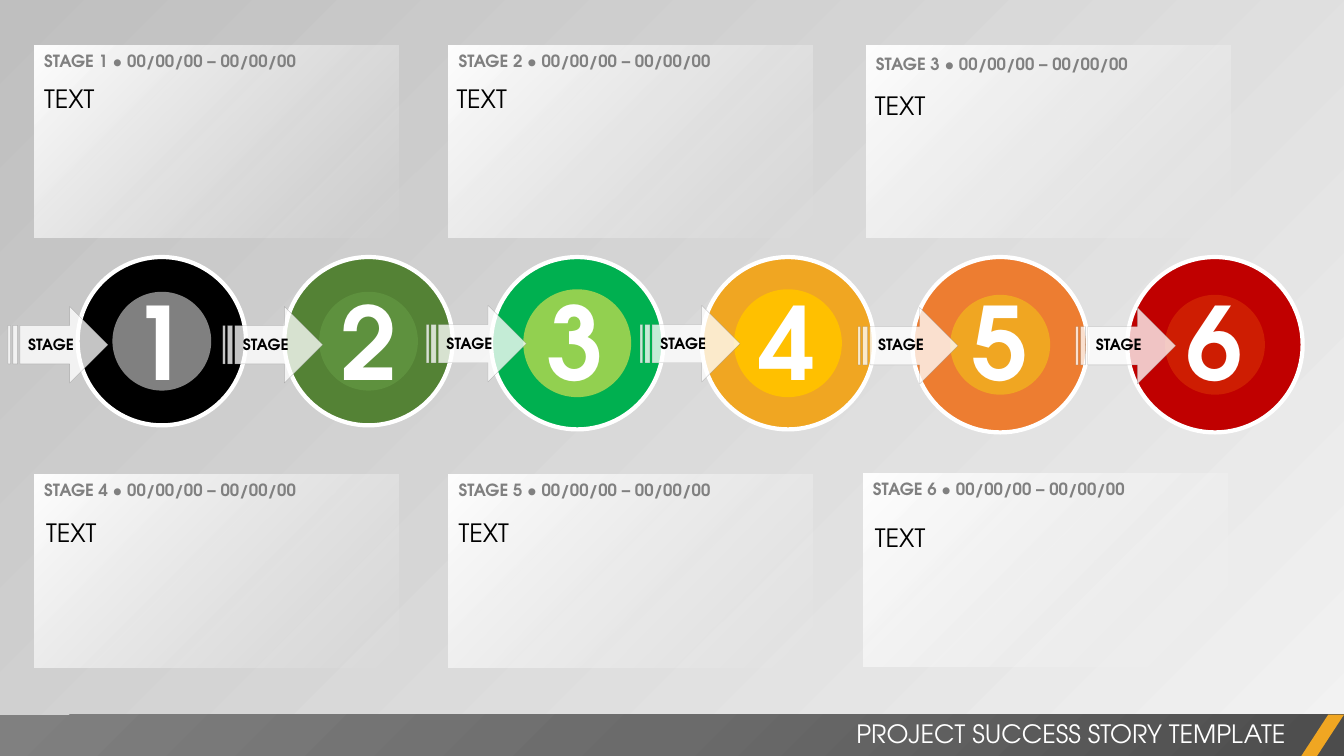
"""Build a six-stage project success story slide."""
from lxml.etree import SubElement
from pptx import Presentation
from pptx.dml.color import RGBColor
from pptx.enum.shapes import MSO_SHAPE as Shape
from pptx.enum.text import MSO_ANCHOR as Anchor, MSO_AUTO_SIZE as AutoSize, PP_ALIGN as Align
from pptx.oxml import parse_xml
from pptx.oxml.ns import nsdecls, qn
from pptx.util import Inches, Pt

FONT = "TeX Gyre Adventor"
WHITE = RGBColor(0xFF, 0xFF, 0xFF)
BLACK = RGBColor(0x00, 0x00, 0x00)
GRAY = RGBColor(0x80, 0x80, 0x80)
DARK_GRAY = RGBColor(0x4C, 0x4C, 0x4C)
MID_GRAY = RGBColor(0x6B, 0x6B, 0x6B)
PALE_GRAY = RGBColor(0xF2, 0xF2, 0xF2)
SILVER = RGBColor(0xBF, 0xBF, 0xBF)
FOREST = RGBColor(0x54, 0x82, 0x35)
LEAF = RGBColor(0x5E, 0x91, 0x3E)
GREEN = RGBColor(0x00, 0xB0, 0x50)
LIME = RGBColor(0x92, 0xD0, 0x50)
AMBER = RGBColor(0xF0, 0xA6, 0x22)
YELLOW = RGBColor(0xFF, 0xC0, 0x00)
ORANGE = RGBColor(0xED, 0x7D, 0x31)
RED = RGBColor(0xC0, 0x00, 0x00)
SCARLET = RGBColor(0xCE, 0x1D, 0x02)

DIAGONAL = '<a:lin ang="13500000" scaled="0"/>'
CORNER = '<a:path path="circle"><a:fillToRect l="100000" t="100000"/></a:path>'
HEADING = {"size": Pt(12), "bold": True}
BODY = {"size": Pt(18), "bold": False}
STAGE = {"size": Pt(11), "bold": True}
NUMBER = {"size": Pt(72), "bold": True}


def paint_gradient(fill, element, stops, shade):
    fill.gradient()
    default = element.find(".//" + qn("a:gradFill"))
    stop_xml = "".join(
        f'<a:gs pos="{position * 1000}"><a:srgbClr val="{color}">'
        f'<a:alpha val="{opacity * 1000}"/></a:srgbClr></a:gs>'
        for position, color, opacity in stops
    )
    gradient = parse_xml(
        f'<a:gradFill {nsdecls("a")} rotWithShape="1"><a:gsLst>{stop_xml}</a:gsLst>{shade}</a:gradFill>'
    )
    default.getparent().replace(default, gradient)


def write_text(shape, text, color, style, align=Align.LEFT):
    frame = shape.text_frame
    frame.text = text
    frame.word_wrap = True
    frame.auto_size = AutoSize.SHAPE_TO_FIT_TEXT
    frame.vertical_anchor = Anchor.TOP
    paragraph = frame.paragraphs[0]
    paragraph.alignment = align
    font = paragraph.runs[0].font
    for name, value in {"name": FONT, **style}.items():
        setattr(font, name, value)
    font.color.rgb = color


presentation = Presentation()
presentation.slide_width = Inches(13.33)
presentation.slide_height = Inches(7.5)
slide = presentation.slides.add_slide(presentation.slide_layouts[5])
shapes = slide.shapes
paint_gradient(slide.background.fill, slide._element, [(0, PALE_GRAY, 40), (100, SILVER, 100)], DIAGONAL)

panels = [
    (0.34, 0.45, 0.45, 0.34, 0.78),
    (4.45, 0.45, 0.45, 4.43, 0.78),
    (8.59, 0.45, 0.48, 8.58, 0.85),
    (0.34, 4.71, 4.71, 0.36, 5.08),
    (4.45, 4.71, 4.71, 4.45, 5.08),
    (8.56, 4.7, 4.7, 8.58, 5.13),
]
for number, (left, top, heading_top, body_left, body_top) in enumerate(panels, 1):
    panel = shapes.add_shape(Shape.ROUNDED_RECTANGLE, Inches(left), Inches(top), Inches(3.61), Inches(1.91))
    panel.adjustments[0] = 0
    panel.shadow.inherit = False
    panel.line.fill.background()
    paint_gradient(panel.fill, panel._element, [(0, PALE_GRAY, 0), (100, WHITE, 100)], DIAGONAL)
    heading = shapes.add_textbox(Inches(left), Inches(heading_top), Inches(3.63), Inches(0.3))
    write_text(heading, f"STAGE {number} • 00/00/00 – 00/00/00", GRAY, HEADING)
    body = shapes.add_textbox(Inches(body_left), Inches(body_top), Inches(3.56), Inches(0.4))
    write_text(body, "TEXT", BLACK, BODY)

circles = [
    (0.77, 1.67, 0.98, BLACK, GRAY),
    (2.82, 1.67, 0.98, FOREST, LEAF),
    (4.87, 1.71, 1.07, GREEN, LIME),
    (6.96, 1.71, 1.07, AMBER, YELLOW),
    (9.05, 1.74, 0.99, ORANGE, AMBER),
    (11.18, 1.74, 0.99, RED, SCARLET),
]
for left, outer, inner, ring_color, core_color in circles:
    badge = shapes.add_group_shape()
    for diameter, color in ((outer, ring_color), (inner, core_color)):
        inset = (outer - diameter) / 2
        circle = badge.shapes.add_shape(
            Shape.OVAL, Inches(left + inset), Inches(2.55 + inset), Inches(diameter), Inches(diameter)
        )
        circle.shadow.inherit = False
        circle.fill.solid()
        circle.fill.fore_color.rgb = color
        if diameter == outer:
            circle.line.color.rgb = WHITE
            circle.line.width = Pt(3)
        else:
            circle.line.fill.background()

markers = [
    (0.08, 3.04, 3.28, 1.21),
    (2.21, 3.04, 3.28, 3.28),
    (4.23, 3.03, 3.27, 5.33),
    (6.35, 3.03, 3.27, 7.43),
    (8.51, 3.05, 3.28, 9.55),
    (10.67, 3.05, 3.28, 11.67),
]
for number, (left, top, label_top, number_left) in enumerate(markers, 1):
    arrow = shapes.add_shape(Shape.STRIPED_RIGHT_ARROW, Inches(left), Inches(top), Inches(0.99), Inches(0.76))
    arrow.shadow.inherit = False
    arrow.fill.solid()
    arrow.fill.fore_color.rgb = WHITE
    arrow.line.color.rgb = GRAY
    arrow.line.width = Pt(0.25)
    for color, opacity in zip(arrow._element.spPr.iter(qn("a:srgbClr")), (77, 50)):
        SubElement(color, qn("a:alpha"), val=str(opacity * 1000))
    label = shapes.add_textbox(Inches(left + 0.1), Inches(label_top), Inches(0.79), Inches(0.29))
    write_text(label, "STAGE", BLACK, STAGE)
    digit = shapes.add_textbox(Inches(number_left), Inches(2.73), Inches(0.92), Inches(1.31))
    write_text(digit, str(number), WHITE, NUMBER)

footer = shapes.add_shape(Shape.RECTANGLE, 0, Inches(7.09), Inches(13.33), Inches(0.42))
paint_gradient(
    footer.fill, footer._element, [(0, DARK_GRAY, 100), (50, MID_GRAY, 100), (100, GRAY, 100)], CORNER
)
accent = shapes.add_shape(Shape.PARALLELOGRAM, Inches(12.9), Inches(7.09), Inches(0.43), Inches(0.42))
accent.adjustments[0] = 0.652
accent.fill.solid()
accent.fill.fore_color.rgb = AMBER
for shape in (footer, accent):
    shape.shadow.inherit = False
    shape.line.fill.background()

title = shapes.title
title.left, title.top, title.width, title.height = (Inches(value) for value in (5.25, 7.08, 7.6, 0.4))
write_text(title, "PROJECT SUCCESS STORY TEMPLATE", WHITE, BODY, Align.RIGHT)
shapes._spTree.append(title._element)

presentation.save("out.pptx")
